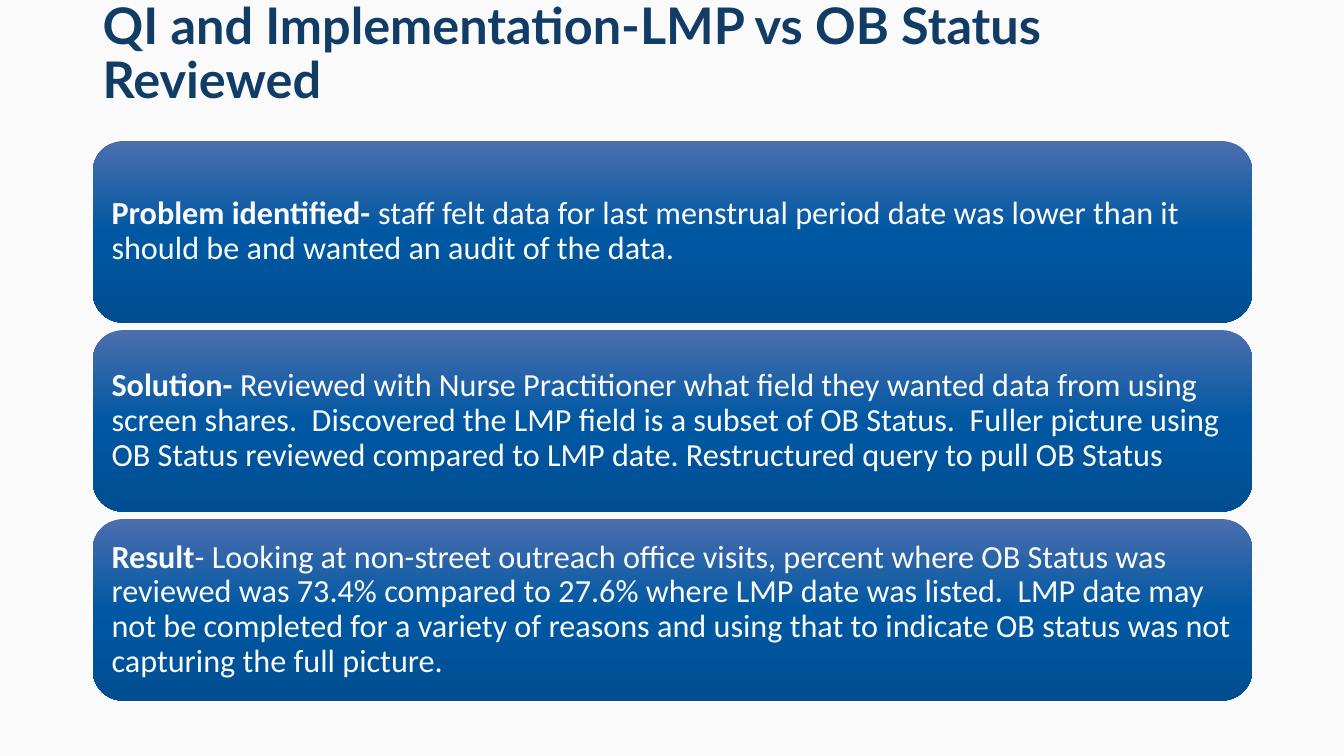
import copy
import pptx
import pptx.util
import pptx.dml.color
import pptx.enum.shapes
import pptx.enum.text
import pptx.oxml.ns

Inches, Pt = pptx.util.Inches, pptx.util.Pt
RGB = pptx.dml.color.RGBColor
MIDDLE = pptx.enum.text.MSO_ANCHOR.MIDDLE
LEFT = pptx.enum.text.PP_ALIGN.LEFT

# Content
TITLE = "QI and Implementation-LMP vs OB Status Reviewed"
CARDS = [
    ("Problem identified- ",
     "staff felt data for last menstrual period date was lower than it should be "
     "and wanted an audit of the data."),
    ("Solution-",
     " Reviewed with Nurse Practitioner what field they wanted data from using "
     "screen shares.  Discovered the LMP field is a subset of OB Status.  Fuller "
     "picture using OB Status reviewed compared to LMP date. Restructured query "
     "to pull OB Status"),
    ("Result",
     "- Looking at non-street outreach office visits, percent where OB Status was "
     "reviewed was 73.4% compared to 27.6% where LMP date was listed.  LMP date "
     "may not be completed for a variety of reasons and using that to indicate OB "
     "status was not capturing the full picture."),
]

# Colours and formats
PAPER = RGB(0xFA, 0xFA, 0xFA)
NAVY = RGB(0x11, 0x3C, 0x66)
SHADES = [(0, RGB(0x4B, 0x6E, 0xAD)), (0.5, RGB(0x00, 0x58, 0xA3)),
          (1, RGB(0x00, 0x4E, 0x91))]
HEAD = {"name": "Lato", "size": Pt(36)}
BODY = {"name": "Calibri", "size": Pt(23)}

# Layout in inches
SIDE, WIDE = 0.92, 11.5
TOP, TALL, GAP = 1.4, 1.8, 0.075


def style(item, form):
    for key, value in form.items():
        setattr(item, key, value)


def write(shape, runs, font, color, inset):
    frame = shape.text_frame
    style(frame, {"word_wrap": True, "vertical_anchor": MIDDLE,
                  "margin_left": Inches(0.1), "margin_right": Inches(0.1),
                  "margin_top": Inches(inset), "margin_bottom": Inches(inset)})
    para = frame.paragraphs[0]
    style(para, {"alignment": LEFT, "line_spacing": 0.9})
    for text, bold in runs:
        run = para.add_run()
        run.text = text
        style(run.font, {**font, "bold": bold})
        run.font.color.rgb = color


def shade(shape):
    fill = shape.fill
    fill.gradient()
    fill.gradient_angle = 270
    first = shape._element.spPr.find(".//" + pptx.oxml.ns.qn("a:gs"))
    first.addnext(copy.deepcopy(first))
    for stop, (place, color) in zip(fill.gradient_stops, SHADES):
        stop.position = place
        stop.color.rgb = color


def main():
    deck = pptx.Presentation()
    deck.slide_width, deck.slide_height = Inches(13.33), Inches(7.5)
    slide = deck.slides.add_slide(deck.slide_layouts[6])
    slide.background.fill.solid()
    slide.background.fill.fore_color.rgb = PAPER

    # Title
    box = slide.shapes.add_textbox(
        Inches(SIDE), Inches(0.01), Inches(WIDE), Inches(1.08))
    write(box, [(TITLE, True)], HEAD, NAVY, 0)

    # Stacked cards
    for row, (label, text) in enumerate(CARDS):
        card = slide.shapes.add_shape(
            pptx.enum.shapes.MSO_SHAPE.ROUNDED_RECTANGLE,
            Inches(SIDE), Inches(TOP + row * (TALL + GAP)),
            Inches(WIDE), Inches(TALL))
        card.shadow.inherit = False
        card.line.fill.background()
        shade(card)
        write(card, [(label, True), (text, False)], BODY, PAPER, 0.1)

    deck.save("out.pptx")


if __name__ == "__main__":
    main()
